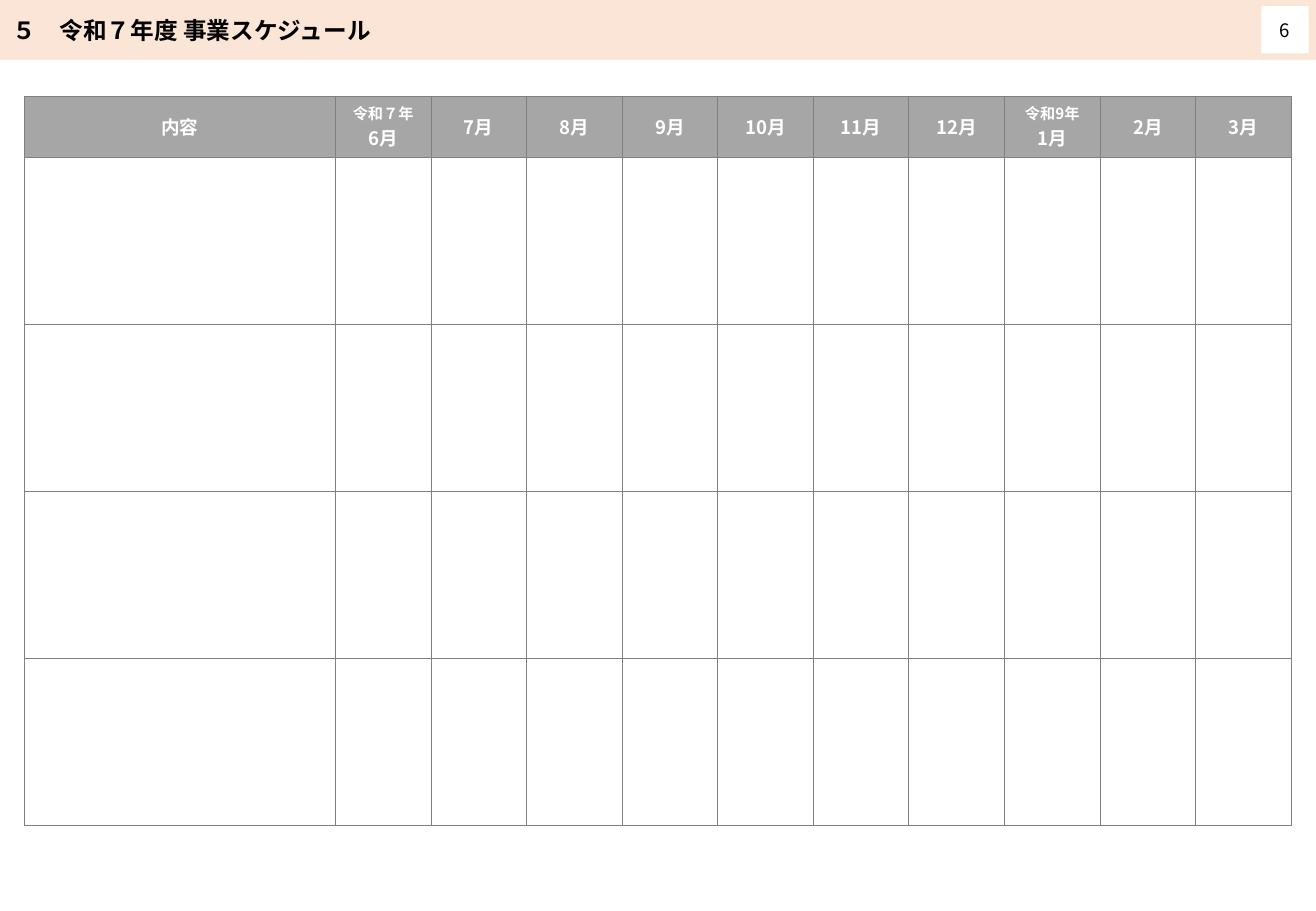
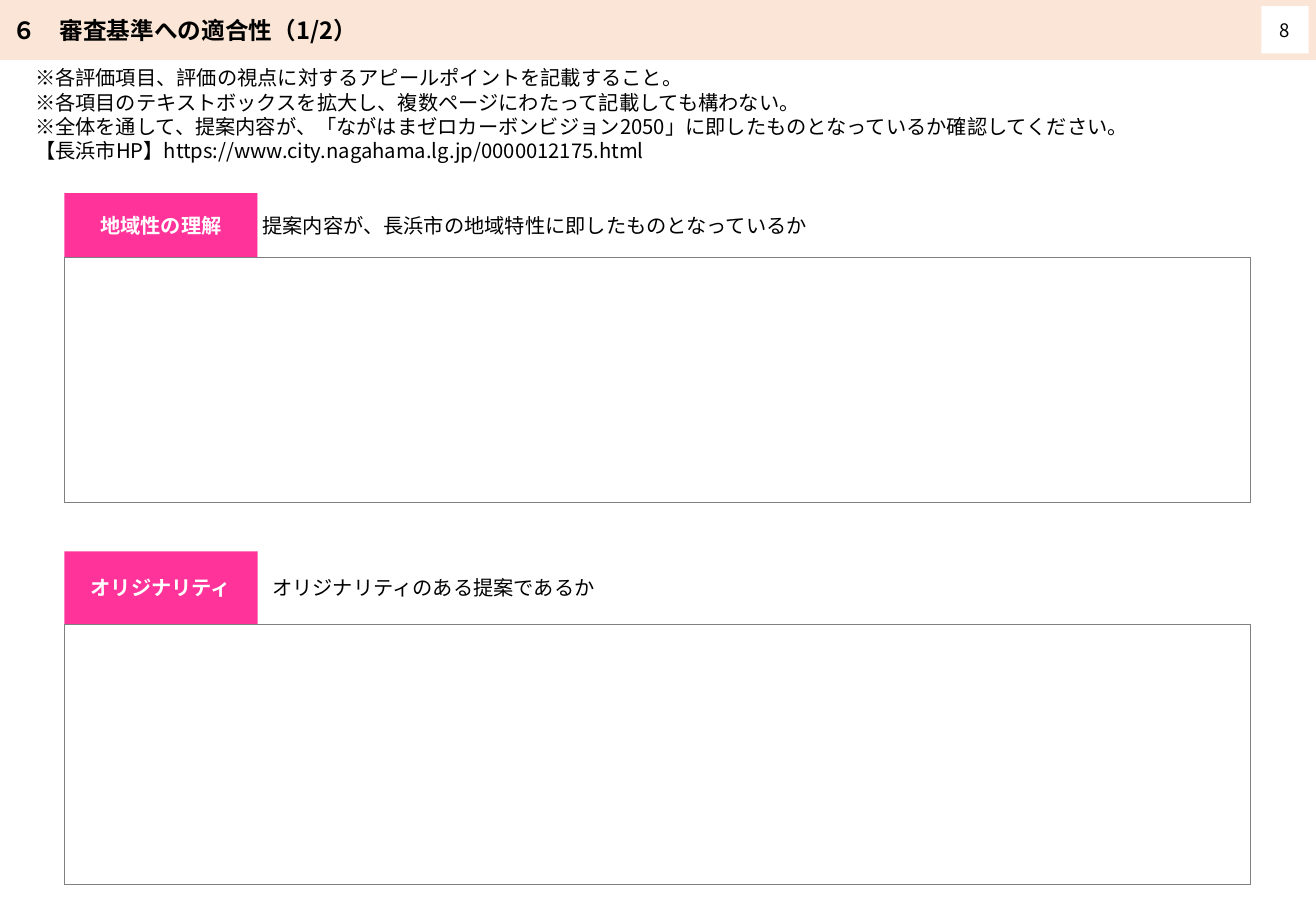
import pptx
import pptx.util
import pptx.dml.color
import pptx.enum.shapes
import pptx.enum.text
import pptx.oxml
import pptx.oxml.ns

# Shared look; every length counts steps of a fine grid
STEP = pptx.util.Inches(0.01)
COLUMNS, ROWS = 1083, 750
BAND = 49
FONT = "Noto Sans CJK JP"
PEACH, PINK, GREY, RULE = "FBE5D6", "FF3399", "A6A6A6", "808080"
BLACK, WHITE = "000000", "FFFFFF"
LEFT = pptx.enum.text.PP_ALIGN.LEFT
CENTER = pptx.enum.text.PP_ALIGN.CENTER
MIDDLE = pptx.enum.text.MSO_ANCHOR.MIDDLE
RECTANGLE = pptx.enum.shapes.MSO_SHAPE.RECTANGLE


def color(value):
    return pptx.dml.color.RGBColor.from_string(value)


def grid(*counts):
    return [round(count * STEP) for count in counts]


def set_all(target, values):
    for name, value in values.items():
        setattr(target, name, value)


def write(frame, lines, ink=BLACK, bold=False, align=LEFT, after=0):
    """Write (text, size) lines, one paragraph each."""
    for index, (text, size) in enumerate(lines):
        para = frame.paragraphs[0] if index == 0 else frame.add_paragraph()
        set_all(para, {"alignment": align, "space_after": pptx.util.Pt(after)})
        span = para.add_run()
        span.text = text
        set_all(span.font, {"name": FONT, "size": pptx.util.Pt(size), "bold": bold})
        span.font.color.rgb = color(ink)
        east_asian = pptx.oxml.parse_xml(
            f'<a:ea {pptx.oxml.ns.nsdecls("a")} typeface="{FONT}"/>')
        span.font._element.find(pptx.oxml.ns.qn("a:latin")).addnext(east_asian)


def paint(box, fill, line=None, width=1):
    box.fill.solid()
    box.fill.fore_color.rgb = color(fill)
    if line:
        box.line.color.rgb = color(line)
        box.line.width = pptx.util.Pt(width)
    else:
        box.line.fill.background()


def add_box(shapes, area, fill, lines, margin=10, **style):
    box = shapes.add_shape(RECTANGLE, *grid(*area))
    box.shadow.inherit = False
    paint(box, fill)
    set_all(box.text_frame, {"word_wrap": True, "vertical_anchor": MIDDLE})
    sides = ("margin_left", "margin_top", "margin_right", "margin_bottom")
    set_all(box.text_frame, dict.fromkeys(sides, grid(margin)[0]))
    write(box.text_frame, lines, **style)


def add_table(page, left, top, widths, heights):
    """Add an unfilled table with thin rules round every cell."""
    frame = page.shapes.add_table(len(heights), len(widths),
                                  *grid(left, top, sum(widths), sum(heights)))
    table = frame.table
    set_all(table, {"first_row": False, "horz_banding": False})
    for column, width in zip(table.columns, grid(*widths)):
        column.width = width
    for row, height in zip(table.rows, grid(*heights)):
        row.height = height
    for cell in table.iter_cells():
        properties = cell._tc.get_or_add_tcPr()
        for side in "LRTB":
            properties.append(pptx.oxml.parse_xml(
                f'<a:ln{side} {pptx.oxml.ns.nsdecls("a")} w="{pptx.util.Pt(0.5)}">'
                f'<a:solidFill><a:srgbClr val="{RULE}"/></a:solidFill></a:ln{side}>'))
        cell.fill.background()
    return table


def add_page(deck, title, number):
    """Add a title-only slide with its title band and page number."""
    page = deck.slides.add_slide(deck.slide_layouts[5])
    band = page.shapes.title
    left, top, width, height = grid(0, 0, COLUMNS, BAND)
    set_all(band, {"left": left, "top": top, "width": width, "height": height})
    paint(band, PEACH, PEACH)
    set_all(band.text_frame, {"vertical_anchor": MIDDLE, "word_wrap": True,
                              "auto_size": pptx.enum.text.MSO_AUTO_SIZE.NONE})
    write(band.text_frame, [(title, 14)], bold=True)
    side = BAND - 10
    add_box(page.shapes, (COLUMNS - side - 6, 5, side, side), WHITE,
            [(number, 11)], align=CENTER)
    return page


def add_schedule(page, left, top):
    years = {"6月": "令和７年", "1月": "令和9年"}
    months = [f"{(month - 1) % 12 + 1}月" for month in range(6, 16)]
    table = add_table(page, left, top, [256] + [78.7] * len(months),
                      [50] + [137.5] * 4)
    # Header row
    for cell, label in zip(table.rows[0].cells, ["内容"] + months):
        cell.fill.solid()
        cell.fill.fore_color.rgb = color(GREY)
        cell.vertical_anchor = MIDDLE
        year = [(years[label], 9)] if label in years else []
        write(cell.text_frame, year + [(label, 11)],
              ink=WHITE, bold=True, align=CENTER)


def add_notes_to_applicant(page, left, top, width, height):
    box = page.shapes.add_textbox(*grid(left, top, width, height))
    box.text_frame.word_wrap = True
    lines = (
        "※各評価項目、評価の視点に対するアピールポイントを記載すること。",
        "※各項目のテキストボックスを拡大し、複数ページにわたって記載しても構わない。",
        "※全体を通して、提案内容が、「ながはまゼロカーボンビジョン2050」に即したものとなっているか確認してください。",
        "【長浜市HP】https://www.city.nagahama.lg.jp/0000012175.html",
    )
    write(box.text_frame, [(line, 12) for line in lines])


def add_criterion(page, left, top, head, body, gap, label, question):
    """Add a label with its question above an empty answer field."""
    label_width, question_width, field_width = 159, 818, 976
    heading = page.shapes.add_group_shape().shapes
    style = {"margin": 4, "after": 4}
    add_box(heading, (left, top, label_width, head), PINK, [(label, 12)],
            ink=WHITE, bold=True, align=CENTER, **style)
    add_box(heading, (left + label_width + gap, top, question_width, head),
            WHITE, [(question, 12)], **style)
    add_table(page, left, top + head, [field_width], [body])


def main():
    deck = pptx.Presentation()
    deck.slide_width, deck.slide_height = grid(COLUMNS, ROWS)

    # Schedule
    page = add_page(deck, "５　令和７年度 事業スケジュール", "6")
    add_schedule(page, 20, 79)

    # Review criteria
    page = add_page(deck, "６　審査基準への適合性（1/2）", "8")
    add_notes_to_applicant(page, 19, BAND, 1046, 91)
    add_criterion(page, 53, 159, 53, 202, 0, "地域性の理解",
                  "提案内容が、長浜市の地域特性に即したものとなっているか")
    add_criterion(page, 53, 454, 60, 214, 8, "オリジナリティ",
                  "オリジナリティのある提案であるか")

    deck.save("out.pptx")


if __name__ == "__main__":
    main()
